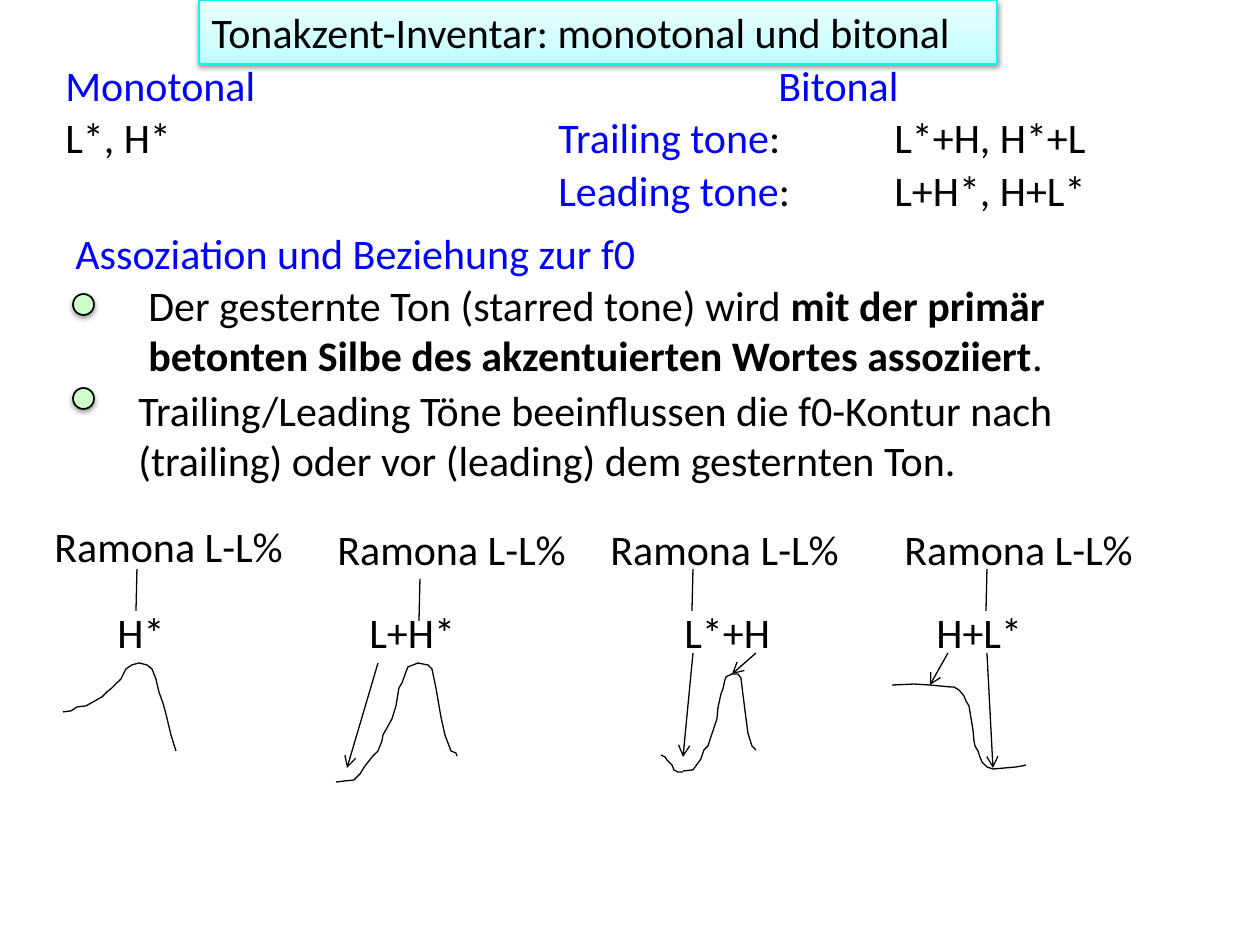
import copy
import pptx
import pptx.util
import pptx.dml.color
import pptx.enum.text
import pptx.enum.shapes
import pptx.oxml
import pptx.oxml.ns
from dataclasses import dataclass


@dataclass(frozen=True)
class Theme:
    font: str = "Calibri"
    size: int = 24
    ink: str = "000000"
    head: str = "0000FF"
    dot: str = "CCFFCC"
    edge: str = "00F9F9"
    fade: tuple = ((0, "BDFFFF"), (0.35, "D1FFFF"), (1, "EEFFFF"))
    thin: float = 0.75
    rim: float = 1


THEME = Theme()
PX = pptx.util.Inches(1) / 126
ROW, PAIR = 64, 115

TITLE = ("Tonakzent-Inventar: monotonal und bitonal", (199, 0, 798, ROW))
HEADS = [
    ("Monotonal", (53, 53, 262, ROW)),
    ("Bitonal", (766, 53, 179, ROW)),
    ("Assoziation und Beziehung zur f0", (63, 221, 777, ROW)),
]
PLAIN = ("L*, H*", (53, 105, 189, ROW))
TONES = [("Trailing tone", "L*+H, H*+L"), ("Leading tone", "L+H*, H+L*")]
POINTS = [
    ([("Der gesternte Ton (starred tone) wird ", False),
      ("mit der primär betonten Silbe des akzentuierten Wortes assoziiert", True),
      (".", False)], (136, 273, 987, PAIR), 294),
    ([("Trailing/Leading Töne beeinflussen die f0-Kontur nach (trailing) "
       "oder vor (leading) dem gesternten Ton.", False)], (126, 378, 1018, PAIR), 388),
]
WORD = "Ramona L-L%"
CASES = [
    dict(word=(42, 514), tone="H*", at=105, wide=84, stem=(137, 569), arrows=[],
         curves=[[(63, 712), (71, 711), (77, 707), (86, 706), (102, 697), (107, 692),
                  (112, 688), (121, 679), (126, 669), (132, 665), (139, 663), (147, 665),
                  (152, 669), (156, 679), (159, 692), (163, 703), (166, 714), (171, 735),
                  (176, 751)]]),
    dict(word=(325, 517), tone="L+H*", at=357, wide=136, stem=(420, 579),
         arrows=[(378, 663, 347, 768)],
         curves=[[(336, 782), (354, 780), (360, 774), (365, 766), (373, 756), (378, 751),
                  (382, 741), (383, 735), (392, 719), (396, 706), (399, 688), (402, 683),
                  (406, 672), (408, 667), (418, 663), (428, 665), (432, 669), (436, 688),
                  (441, 717), (445, 735), (451, 751), (456, 753), (457, 756)]]),
    dict(word=(598, 517), tone="L*+H", at=672, wide=136, stem=(693, 569),
         arrows=[(693, 653, 683, 757), (756, 653, 732, 674)],
         curves=[[(683, 771), (693, 770), (701, 759), (704, 750), (708, 746), (711, 737),
                  (717, 719), (718, 708), (721, 694), (723, 689), (725, 680), (726, 677),
                  (732, 674), (738, 674), (741, 678), (743, 694), (746, 718), (748, 733),
                  (752, 746), (756, 750)],
                 [(661, 755), (665, 757), (667, 760), (672, 765), (674, 770), (678, 772),
                  (683, 772)]]),
    dict(word=(892, 517), tone="H+L*", at=924, wide=136, stem=(987, 569),
         arrows=[(987, 653, 993, 768), (948, 653, 930, 685)],
         curves=[[(892, 685), (914, 684), (930, 685), (951, 687), (954, 687), (959, 690),
                  (964, 696), (966, 701), (969, 706), (971, 718), (973, 730), (974, 741),
                  (975, 746), (978, 751), (980, 757), (982, 762), (987, 767), (993, 769),
                  (1016, 767), (1022, 766), (1026, 765)]]),
]


def emu(*nums):
    return [round(num * PX) for num in nums]


def rgb(code):
    return pptx.dml.color.RGBColor.from_string(code)


def write(frame, runs, color=THEME.ink):
    frame.word_wrap = True
    frame.auto_size = pptx.enum.text.MSO_AUTO_SIZE.NONE
    frame.vertical_anchor = pptx.enum.text.MSO_ANCHOR.TOP
    para = frame.paragraphs[0]
    para.alignment = pptx.enum.text.PP_ALIGN.LEFT
    for text, form in runs:
        run = para.add_run()
        run.text = text
        run.font.name = THEME.font
        run.font.size = pptx.util.Pt(THEME.size)
        run.font.bold = form.get("bold", False)
        run.font.color.rgb = rgb(form.get("color", color))


def label(slide, text, box, **form):
    runs = [(text, {})] if isinstance(text, str) else text
    write(slide.shapes.add_textbox(*emu(*box)).text_frame, runs, **form)


def stroke(item, color=THEME.ink, width=THEME.thin):
    item.line.color.rgb = rgb(color)
    item.line.width = pptx.util.Pt(width)


def effect(item, shade=False):
    ns = pptx.oxml.ns.nsdecls("a")
    body = ('<a:outerShdw blurRad="39370" dist="20320" dir="5400000" rotWithShape="0">'
            '<a:srgbClr val="000000"><a:alpha val="38000"/></a:srgbClr></a:outerShdw>')
    xml = f"<a:effectLst {ns}>{body if shade else ''}</a:effectLst>"
    item._element.spPr.append(pptx.oxml.parse_xml(xml))


def banner(slide):
    text, box = TITLE
    item = slide.shapes.title
    item.left, item.top, item.width, item.height = emu(*box)
    item.fill.gradient()
    item.fill.gradient_angle = 90
    stops = item._element.spPr.find(".//" + pptx.oxml.ns.qn("a:gsLst"))
    stops.append(copy.deepcopy(stops[-1]))
    for stop, (pos, color) in zip(item.fill.gradient_stops, THEME.fade):
        stop.position = pos
        stop.color.rgb = rgb(color)
    stroke(item, THEME.edge)
    effect(item, shade=True)
    write(item.text_frame, [(text, {})])


def line(slide, ends, arrow=False):
    kind = pptx.enum.shapes.MSO_CONNECTOR.STRAIGHT
    item = slide.shapes.add_connector(kind, *emu(*ends))
    stroke(item)
    if arrow:
        tail = f'<a:tailEnd {pptx.oxml.ns.nsdecls("a")} type="arrow"/>'
        item.line._get_or_add_ln().append(pptx.oxml.parse_xml(tail))
    effect(item)


def curve(slide, dots):
    build = slide.shapes.build_freeform(*dots[0], scale=PX)
    build.add_line_segments(dots[1:], close=False)
    item = build.convert_to_shape()
    item.fill.background()
    stroke(item)
    item.shadow.inherit = False


def bullet(slide, top):
    kind = pptx.enum.shapes.MSO_SHAPE.OVAL
    item = slide.shapes.add_shape(kind, *emu(73, top, 21, 21))
    item.fill.solid()
    item.fill.fore_color.rgb = rgb(THEME.dot)
    stroke(item, width=THEME.rim)
    effect(item, shade=True)


def case(slide, word, tone, at, wide, stem, arrows, curves):
    label(slide, WORD, (*word, 294, ROW))
    label(slide, tone, (at, 600, wide, ROW))
    left, top = stem
    line(slide, (left, top, left - 1, top + 42))
    for dots in curves:
        curve(slide, dots)
    for ends in arrows:
        line(slide, ends, arrow=True)


def main():
    deck = pptx.Presentation()
    deck.slide_width, deck.slide_height = emu(1260, 945)
    slide = deck.slides.add_slide(deck.slide_layouts[5])
    banner(slide)
    for text, box in HEADS:
        label(slide, text, box, color=THEME.head)
    label(slide, *PLAIN)
    for num, (name, tones) in enumerate(TONES):
        top = 105 + num * 53
        label(slide, [(name, {"color": THEME.head}), (":", {})], (546, top, 305, ROW))
        label(slide, tones, (882, top, 242, ROW))
    for item in CASES:
        case(slide, **item)
    for parts, box, top in POINTS:
        label(slide, [(text, {"bold": bold}) for text, bold in parts], box)
        bullet(slide, top)
    deck.save("out.pptx")


if __name__ == "__main__":
    main()
